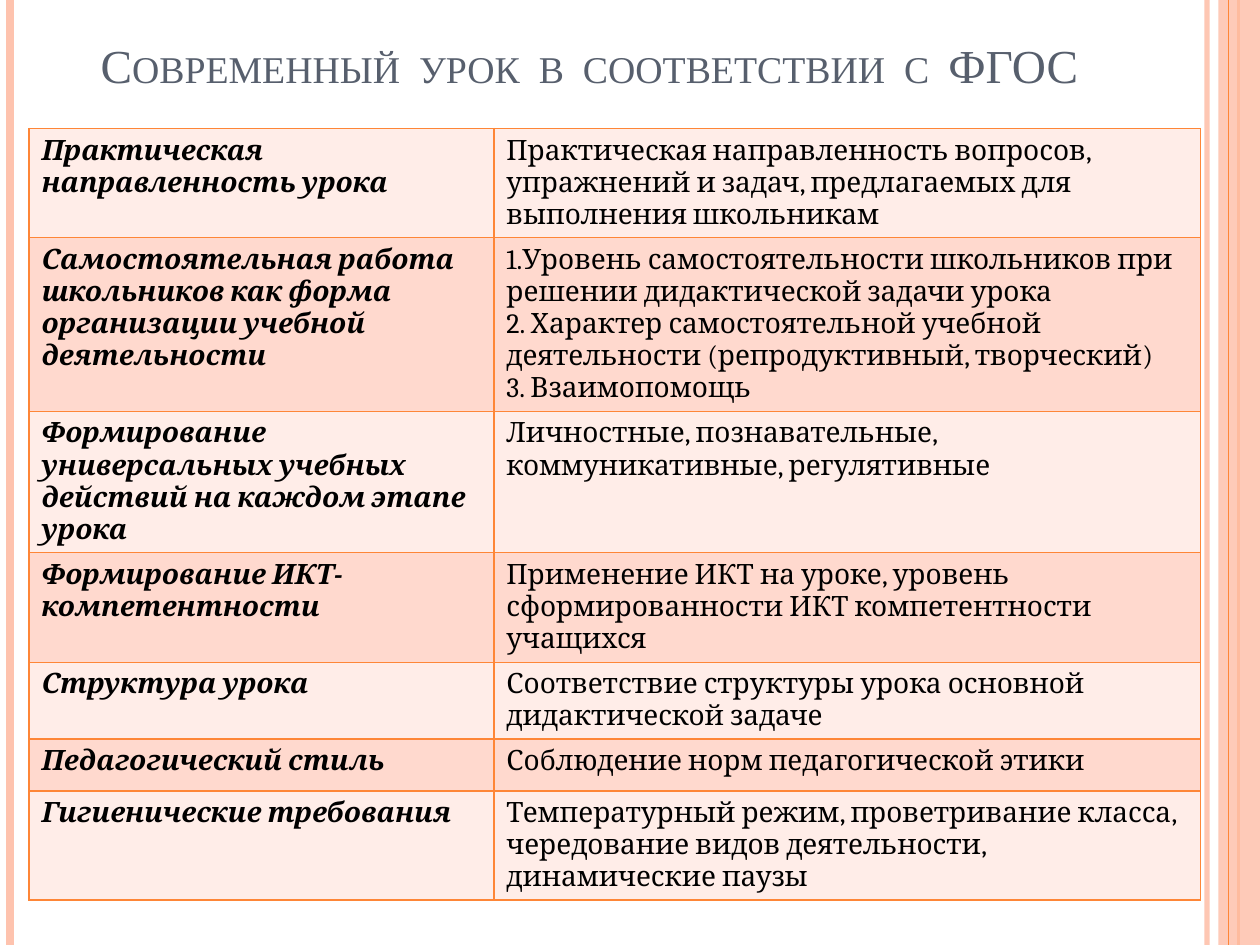
from dataclasses import dataclass

from lxml.etree import SubElement
from pptx import Presentation
from pptx.dml.color import RGBColor
from pptx.enum.shapes import MSO_CONNECTOR as Connector, MSO_SHAPE as Preset
from pptx.enum.text import MSO_ANCHOR as Anchor
from pptx.oxml.ns import qn
from pptx.util import Inches, Pt


@dataclass(frozen=True)
class Theme:
    accent: str = "FE8637"
    stripe: str = "FEC3AE"
    bands: tuple = ("FFEDE8", "FFD9CE")
    title_color: str = "575F6D"
    text_color: str = "000000"
    title_font: str = "Times New Roman"
    table_font: str = "Cambria"
    title_size: int = 27
    table_size: int = 16
    border_width: int = 1


THEME = Theme()
SLIDE_WIDTH, SLIDE_HEIGHT = 10, 7.5
TITLE = "Современный  урок  в  соответствии  с  ФГОС"
COLUMN_WIDTHS = (3.69, 5.61)

# Row height, lesson aspect, paragraphs of its content
LESSON_ASPECTS = [
    (0.86, "Практическая направленность урока",
     ["Практическая направленность вопросов, упражнений и задач, "
      "предлагаемых для выполнения школьникам"]),
    (1.38, "Самостоятельная работа школьников как форма организации "
           "учебной деятельности",
     ["1.Уровень самостоятельности школьников при решении "
      "дидактической задачи урока",
      "2. Характер самостоятельной учебной деятельности "
      "(репродуктивный, творческий)",
      "3. Взаимопомощь"]),
    (1.12, "Формирование универсальных учебных действий на каждом этапе урока",
     ["Личностные, познавательные, коммуникативные, регулятивные"]),
    (0.87, "Формирование ИКТ-компетентности",
     ["Применение ИКТ на уроке, уровень сформированности "
      "ИКТ компетентности учащихся"]),
    (0.61, "Структура урока",
     ["Соответствие структуры урока основной дидактической задаче"]),
    (0.41, "Педагогический стиль",
     ["Соблюдение норм педагогической этики"]),
    (0.86, "Гигиенические требования",
     ["Температурный режим, проветривание класса, "
      "чередование видов деятельности, динамические паузы"]),
]


def set_opacity(owner, percent):
    for color in owner.iter(qn("a:srgbClr")):
        SubElement(color, qn("a:alpha"), val=str(percent * 1000))


def style_text(frame, font_name, size, color, emphasis=False):
    for paragraph in frame.paragraphs:
        for run in paragraph.runs:
            font = run.font
            font.name, font.size = font_name, Pt(size)
            font.color.rgb = RGBColor.from_string(color)
            font.bold = font.italic = emphasis


def add_vertical_rule(slide, x, color, width, opacity=100):
    rule = slide.shapes.add_connector(
        Connector.STRAIGHT, Inches(x), 0, Inches(x), Inches(SLIDE_HEIGHT))
    rule.line.color.rgb = RGBColor.from_string(color)
    rule.line.width = Pt(width)
    properties = rule._element.spPr
    if opacity < 100:
        set_opacity(properties, opacity)
    SubElement(properties, qn("a:effectLst"))


def add_edge_band(slide, x, opacity):
    band = slide.shapes.add_shape(
        Preset.RECTANGLE, Inches(x), 0,
        Inches(SLIDE_WIDTH - x), Inches(SLIDE_HEIGHT))
    band.shadow.inherit = False
    band.fill.solid()
    band.fill.fore_color.rgb = RGBColor.from_string(THEME.stripe)
    band.line.fill.background()
    set_opacity(band._element.spPr.find(qn("a:solidFill")), opacity)


def add_title(slide):
    box = slide.shapes.add_textbox(
        Inches(0.7), Inches(0.31), Inches(8.59), Inches(0.48))
    frame = box.text_frame
    frame.word_wrap = True
    frame.vertical_anchor = Anchor.BOTTOM
    frame.text = TITLE
    style_text(frame, THEME.title_font, THEME.title_size, THEME.title_color)
    frame.paragraphs[0].runs[0].font._element.set("cap", "small")


def add_borders(cell):
    properties = cell._tc.get_or_add_tcPr()
    for side in ("lnL", "lnR", "lnT", "lnB"):
        border = SubElement(properties, qn(f"a:{side}"),
                            w=str(Pt(THEME.border_width)))
        fill = SubElement(border, qn("a:solidFill"))
        SubElement(fill, qn("a:srgbClr"), val=THEME.accent)


def fill_cell(cell, text, band_color, emphasis):
    cell.text_frame.text = text
    style_text(cell.text_frame, THEME.table_font, THEME.table_size,
               THEME.text_color, emphasis)
    # Borders precede the fill in the cell properties
    add_borders(cell)
    cell.fill.solid()
    cell.fill.fore_color.rgb = RGBColor.from_string(band_color)


def add_aspect_table(slide):
    total_height = sum(height for height, _, _ in LESSON_ASPECTS)
    table = slide.shapes.add_table(
        len(LESSON_ASPECTS), len(COLUMN_WIDTHS), Inches(0.23), Inches(1.02),
        Inches(sum(COLUMN_WIDTHS)), Inches(total_height)).table
    table.first_row = False
    for column, width in zip(table.columns, COLUMN_WIDTHS):
        column.width = Inches(width)
    for index, (height, aspect, content) in enumerate(LESSON_ASPECTS):
        table.rows[index].height = Inches(height)
        band_color = THEME.bands[index % 2]
        fill_cell(table.cell(index, 0), aspect, band_color, True)
        fill_cell(table.cell(index, 1), "\n".join(content), band_color, False)


def main():
    deck = Presentation()
    deck.slide_width = Inches(SLIDE_WIDTH)
    deck.slide_height = Inches(SLIDE_HEIGHT)
    slide = deck.slides.add_slide(deck.slide_layouts[6])

    # Edge decoration
    add_vertical_rule(slide, 9.58, THEME.stripe, 3, opacity=93)
    add_vertical_rule(slide, 0.08, THEME.stripe, 4.5)
    add_vertical_rule(slide, 9.83, THEME.accent, 1.5)
    add_edge_band(slide, 9.67, opacity=87)
    add_vertical_rule(slide, 9.75, THEME.accent, 0.75)

    # Content
    add_aspect_table(slide)
    add_title(slide)

    deck.save("out.pptx")


if __name__ == "__main__":
    main()
